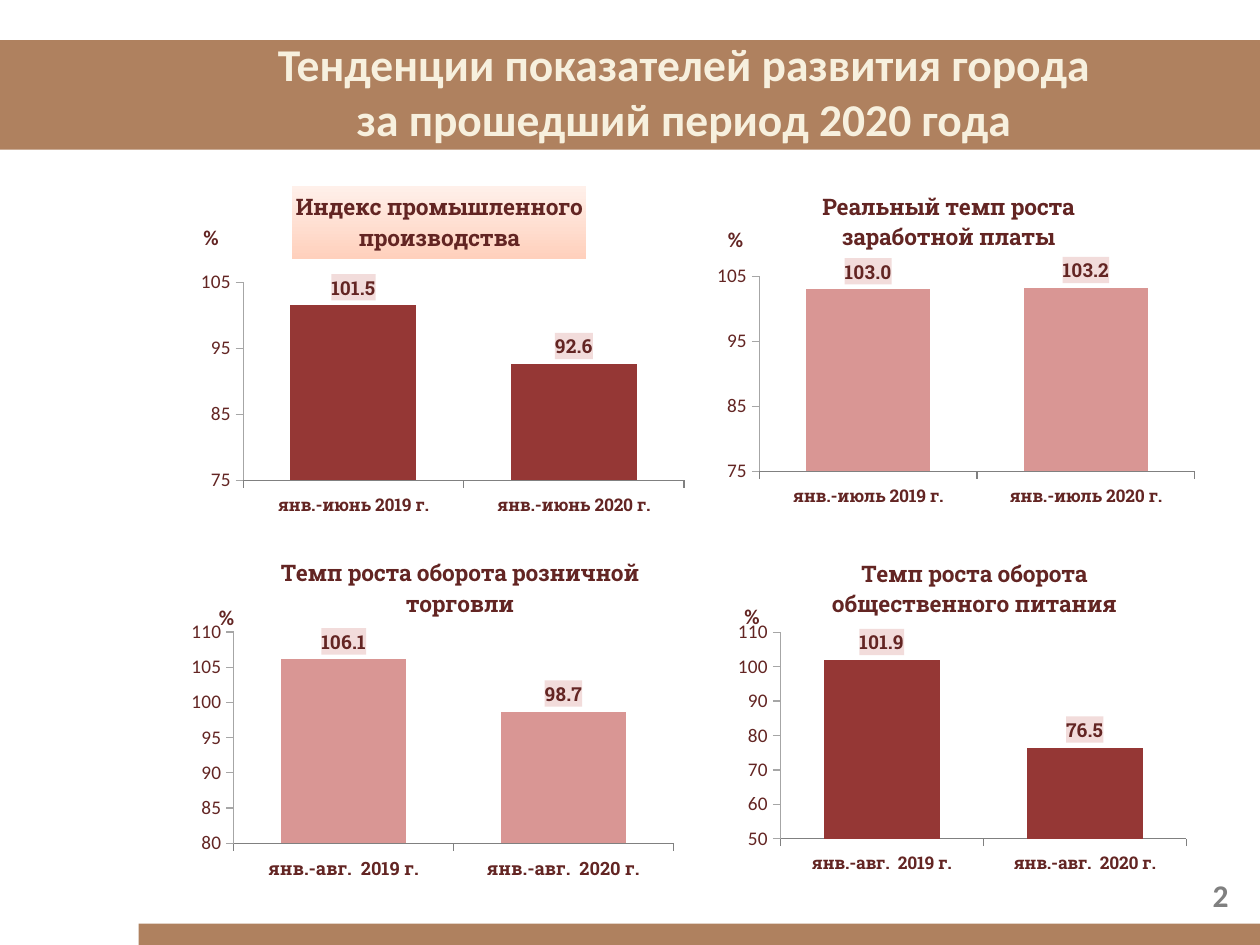
from lxml import etree
from pptx import Presentation
from pptx.chart.data import CategoryChartData
from pptx.dml.color import RGBColor
from pptx.enum.chart import XL_CHART_TYPE, XL_LABEL_POSITION, XL_TICK_MARK
from pptx.enum.shapes import MSO_SHAPE
from pptx.enum.text import MSO_ANCHOR, PP_ALIGN
from pptx.oxml import parse_xml
from pptx.oxml.ns import nsdecls, qn
from pptx.util import Pt

COLUMNS = XL_CHART_TYPE.COLUMN_CLUSTERED
OUTSIDE_END = XL_LABEL_POSITION.OUTSIDE_END
TICK_OUT, TICK_NONE = XL_TICK_MARK.OUTSIDE, XL_TICK_MARK.NONE
RECTANGLE = MSO_SHAPE.RECTANGLE
MIDDLE = MSO_ANCHOR.MIDDLE
CENTER, RIGHT = PP_ALIGN.CENTER, PP_ALIGN.RIGHT

SANS, SLAB = "Calibri", "Roboto Slab"
BROWN, CREAM, GRAY = "AF815F", "F7F0DE", "808080"
MAROON, RED, PINK, LABEL_FILL = "632523", "953735", "D99694", "F2DCDB"
color = RGBColor.from_string


def write(frame, text, size, fill, font=SANS, bold=True, align=CENTER):
    """Write one paragraph per line of text."""
    for index, line in enumerate(text.split("\n")):
        para = frame.add_paragraph() if index else frame.paragraphs[0]
        para.alignment = align
        span = para.add_run()
        span.text = line
        span.font.size, span.font.bold, span.font.name = Pt(size), bold, font
        span.font.color.rgb = color(fill)


def place(element, position, index=1, target=None):
    """Give a chart part a manual layout as fractions of the chart."""
    old = element.find(qn("c:layout"))
    if old is not None:
        element.remove(old)
    layout = etree.Element(qn("c:layout"))
    manual = etree.SubElement(layout, qn("c:manualLayout"))
    if target:
        etree.SubElement(manual, qn("c:layoutTarget")).set("val", target)
    for tag in ("xMode", "yMode"):
        etree.SubElement(manual, qn("c:" + tag)).set("val", "edge")
    for tag, value in zip("xywh", position):
        etree.SubElement(manual, qn("c:" + tag)).set("val", str(value))
    element.insert(index, layout)


deck = Presentation()
deck.slide_width, deck.slide_height = Pt(720), Pt(540)
page = deck.slides.add_slide(deck.slide_layouts[5])
title = page.shapes.title

# Bands at the top and bottom
for left, top, width, height in ((79.2, 527.8, 643.7, 14.4), (0, 23, 722.9, 62.6)):
    band = page.shapes.add_shape(RECTANGLE, Pt(left), Pt(top), Pt(width), Pt(height))
    band.shadow.inherit = False
    band.fill.solid()
    band.fill.fore_color.rgb = color(BROWN)
    band.line.fill.background()

# Slide title, in front of the bands
page.shapes._spTree.append(title._element)
title.left, title.top, title.width, title.height = Pt(70.5), Pt(9.4), Pt(648), Pt(85)
title.text_frame.vertical_anchor = MIDDLE
title.text_frame.margin_right = Pt(14)
write(title.text_frame, "Тенденции показателей развития города\n"
      "за прошедший период 2020 года", 26, CREAM)

# Page number
box = page.shapes.add_textbox(Pt(541.4), Pt(496.8), Pt(167.8), Pt(28.8))
box.text_frame.word_wrap = True
box.text_frame.vertical_anchor = MIDDLE
write(box.text_frame, "2", 18, GRAY, align=RIGHT)

# Four charts: frame in points; title, unit and plot in fractions of the frame
charts = [
    dict(name="Индекс промышленного\nпроизводства", frame=(99.4, 104.4, 293, 193),
         categories=("янв.-июнь 2019 г.", "янв.-июнь 2020 г."), values=(101.5, 92.6),
         fill=RED, scale=(75, 105, 10), category_size=10, shaded=True,
         title_at=(0.23, 0.01), unit_at=(0.05, 0.11), plot=(0.135, 0.295, 0.86, 0.587)),
    dict(name="Темп роста оборота розничной\nторговли", frame=(99.4, 315.4, 294.5, 193),
         categories=("янв.-авг.  2019 г.", "янв.-авг.  2020 г."), values=(106.1, 98.7),
         fill=PINK, scale=(80, 110, 5), category_size=10.5, shaded=False,
         title_at=(0.2, 0), unit_at=(0.08, 0.14), plot=(0.116, 0.237, 0.853, 0.626)),
    dict(name="Реальный темп роста\nзаработной платы", frame=(399.6, 100.1, 283.7, 203),
         categories=("янв.-июль 2019 г.", "янв.-июль 2020 г."), values=(103.0, 103.2),
         fill=PINK, scale=(75, 105, 10), category_size=10, shaded=False,
         title_at=(0.24, 0.03), unit_at=(0.05, 0.13), plot=(0.121, 0.285, 0.877, 0.549)),
    dict(name="Темп роста оборота\nобщественного питания", frame=(399.6, 309.6, 294.5, 203.8),
         categories=("янв.-авг.  2019 г.", "янв.-авг.  2020 г."), values=(101.9, 76.5),
         fill=RED, scale=(50, 110, 10), category_size=10, shaded=False,
         title_at=(0.25, 0.03), unit_at=(0.08, 0.16), plot=(0.157, 0.254, 0.788, 0.579)),
]
for item in charts:
    data = CategoryChartData(number_format="0.0")
    data.categories = item["categories"]
    data.add_series("Series 1", item["values"])
    bounds = [Pt(length) for length in item["frame"]]
    chart = page.shapes.add_chart(COLUMNS, *bounds, data).chart
    chart.has_legend = False
    chart.font.name, chart.font.size = SANS, Pt(11)

    # Chart title
    chart.has_title = True
    heading = chart.chart_title
    write(heading.text_frame, item["name"], 13, MAROON, font=SLAB)
    place(heading._element, item["title_at"])
    if item["shaded"]:
        shade = heading.format.fill
        shade.gradient()
        shade.gradient_angle = 270
        for stop, tint in zip(shade.gradient_stops, ("FFF0EA", "FFD0BC")):
            stop.color.rgb = color(tint)

    # Columns
    plot = chart.plots[0]
    plot.gap_width, plot.overlap, plot.vary_by_categories = 75, -25, False
    fill = plot.series[0].format.fill
    fill.solid()
    fill.fore_color.rgb = color(item["fill"])
    place(chart._chartSpace.chart.plotArea, item["plot"], index=0, target="inner")

    # Value labels on a pale ground
    plot.has_data_labels = True
    labels = plot.data_labels
    labels.show_value, labels.position = True, OUTSIDE_END
    labels.number_format, labels.number_format_is_linked = "0.0", False

    # Axes
    values, categories = chart.value_axis, chart.category_axis
    values.minimum_scale, values.maximum_scale, values.major_unit = item["scale"]
    values.has_major_gridlines = False
    values.tick_labels.number_format = "0"
    values.tick_labels.number_format_is_linked = False
    for axis, tint in ((values, "A6A6A6"), (categories, GRAY)):
        axis.major_tick_mark, axis.minor_tick_mark = TICK_OUT, TICK_NONE
        axis.format.line.color.rgb = color(tint)
        axis.format.line.width = Pt(0.75)
    values.has_title = True
    unit = values.axis_title
    write(unit.text_frame, "%", 12, MAROON)
    unit.text_frame._txBody.bodyPr.set("rot", "0")
    place(unit._element, item["unit_at"])

    for font, size, face, bold in (
            (labels.font, 11, SLAB, True),
            (values.tick_labels.font, 11, SANS, False),
            (categories.tick_labels.font, item["category_size"], SLAB, True)):
        font.size, font.name, font.bold = Pt(size), face, bold
        font.color.rgb = color(MAROON)
    ground = parse_xml(
        f'<c:spPr {nsdecls("c", "a")}><a:solidFill><a:srgbClr val="{LABEL_FILL}"/>'
        '</a:solidFill></c:spPr>')
    labels._element.find(qn("c:txPr")).addprevious(ground)

deck.save("out.pptx")
